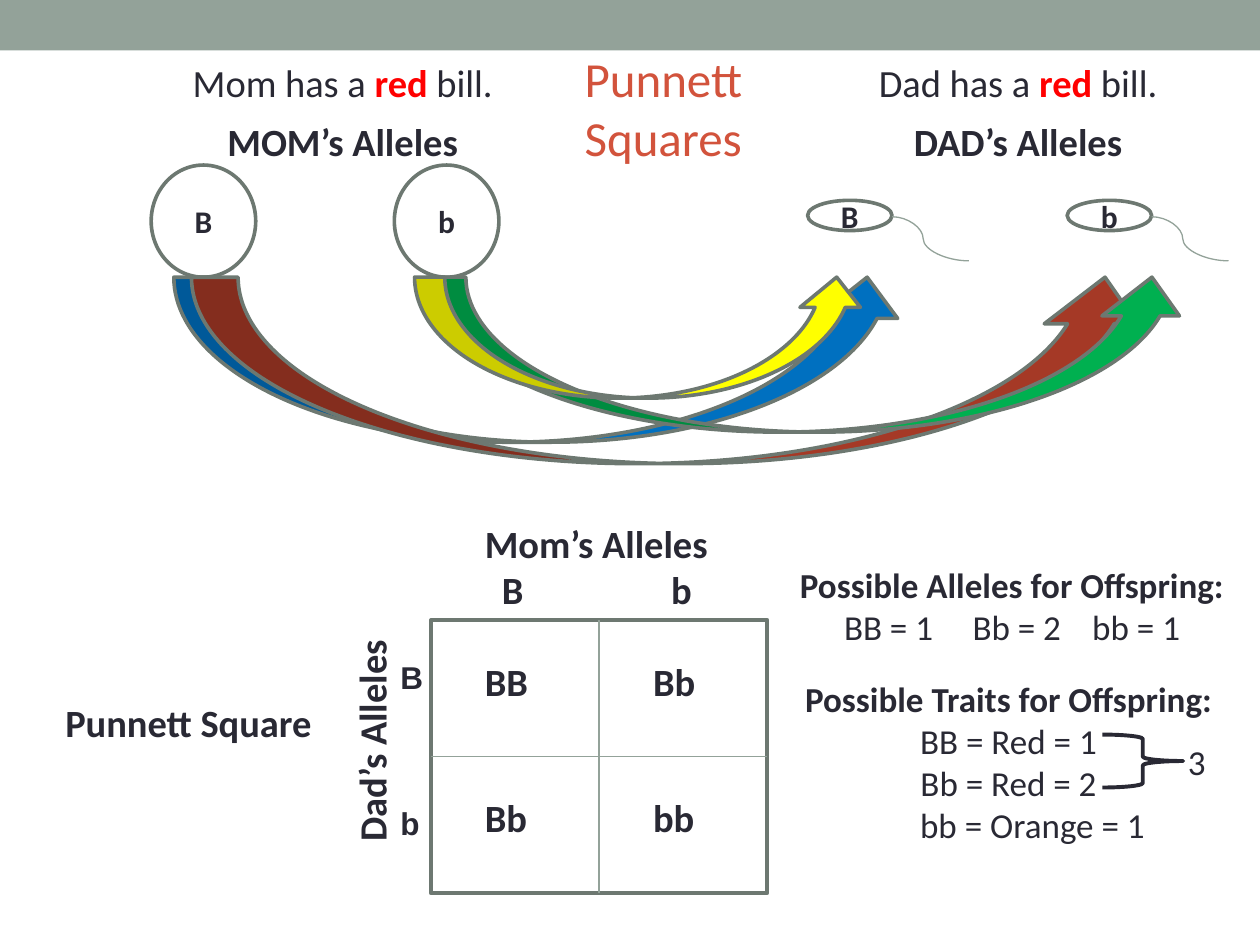
from lxml.etree import SubElement
from pptx import Presentation
from pptx.dml.color import RGBColor
from pptx.enum.shapes import MSO_CONNECTOR, MSO_SHAPE
from pptx.enum.text import MSO_ANCHOR, MSO_AUTO_SIZE, PP_ALIGN
from pptx.oxml.ns import qn
from pptx.util import Inches, Pt

INK, RED, RUST = "292934", "FF0000", "D2533C"
SAGE, EDGE = "93A299", "6D7871"


def paint(color, hue):
    color.rgb = RGBColor.from_string(hue)


def write(para, text, size=22, bold=False, hue=INK, font="Calibri"):
    run = para.add_run()
    run.text = text
    run.font.name = font
    run.font.size = Pt(size)
    run.font.bold = bold
    paint(run.font.color, hue)


def set_tabs(para, stops):
    tabs = SubElement(para._p.get_or_add_pPr(), qn("a:tabLst"))
    for pos, align in stops:
        SubElement(tabs, qn("a:tab"), pos=str(Inches(pos)), algn=align)


def add_text(slide, x, y, w, h):
    box = slide.shapes.add_textbox(Inches(x), Inches(y), Inches(w), Inches(h))
    box.text_frame.word_wrap = True
    return box


def label(slide, text, x, y, w, h=0.47, **style):
    box = add_text(slide, x, y, w, h)
    write(box.text_frame.paragraphs[0], text, **style)
    return box


def add_shape(shapes, kind, x, y, w, h, fill=None, line=EDGE, width=2.08):
    shape = shapes.add_shape(kind, Inches(x), Inches(y), Inches(w), Inches(h))
    shape.shadow.inherit = False
    if fill:
        shape.fill.solid()
        paint(shape.fill.fore_color, fill)
    else:
        shape.fill.background()
    if line:
        paint(shape.line.color, line)
        shape.line.width = Pt(width)
    else:
        shape.line.fill.background()
    return shape


def add_line(shapes, kind, x1, y1, x2, y2):
    line = shapes.add_connector(kind, Inches(x1), Inches(y1), Inches(x2), Inches(y2))
    paint(line.line.color, SAGE)
    line.line.width = Pt(0.75)
    SubElement(line._element.spPr, qn("a:effectLst"))
    return line


def add_header(slide, x, y, w, h):
    title = slide.shapes.title
    title.left, title.top = Inches(x), Inches(y)
    title.width, title.height = Inches(w), Inches(h)
    frame = title.text_frame
    frame.auto_size = MSO_AUTO_SIZE.NONE
    frame.vertical_anchor = MSO_ANCHOR.MIDDLE
    top, low = frame.paragraphs[0], frame.add_paragraph()
    for para in (top, low):
        para.alignment = PP_ALIGN.LEFT
        set_tabs(para, [(2.29, "ctr"), (4.21, "l"), (7.65, "ctr")])
    write(top, "\tMom has a ")
    write(top, "red", bold=True, hue=RED)
    write(top, " bill.")
    write(top, "\tPunnett", size=28, hue=RUST)
    write(top, "\tDad has a ")
    write(top, "red", bold=True, hue=RED)
    write(top, " bill.")
    write(low, "\tMOM’s Alleles", bold=True)
    write(low, "\tSquares", size=28, hue=RUST)
    write(low, "\tDAD’s Alleles", bold=True)


def add_cell(slide, letter, x, y, w, h):
    cell = add_shape(slide.shapes, MSO_SHAPE.OVAL, x, y, w, h)
    frame = cell.text_frame
    frame.margin_left = frame.margin_right = 0
    frame.margin_top = frame.margin_bottom = 0
    frame.word_wrap = False
    frame.vertical_anchor = MSO_ANCHOR.MIDDLE
    frame.paragraphs[0].alignment = PP_ALIGN.CENTER
    write(frame.paragraphs[0], letter, size=18, bold=True)


def add_eggs(slide, x, y):
    for letter, dx in (("B", 0), ("b", 1.93)):
        add_cell(slide, letter, x + dx, y, 0.83, 0.89)


def add_sperm(slide, x, y):
    for letter, dx in (("B", 0), ("b", 2.06)):
        add_cell(slide, letter, x + dx, y, 0.67, 0.24)
        start = x + dx + 0.67
        tail = add_line(slide.shapes, MSO_CONNECTOR.CURVE,
                        start, y + 0.13, start + 0.61, y + 0.48)
        bend = tail._element.spPr.find(".//" + qn("a:avLst"))
        SubElement(bend, qn("a:gd"), name="adj1", fmla="val 40500")


def add_arrows(slide, y):
    for x, w, h, hue in ((1.38, 5.83, 1.31, "0070C0"), (1.52, 7.62, 1.48, "A53926"),
                         (3.39, 6.06, 1.23, "00B050"), (3.29, 3.59, 0.96, "FFFF00")):
        add_shape(slide.shapes, MSO_SHAPE.CURVED_UP_ARROW, x, y, w, h, fill=hue)


def add_square(slide, x, y, w, h):
    group = slide.shapes.add_group_shape().shapes
    frame = add_shape(group, MSO_SHAPE.RECTANGLE, x, y, w, h)
    midx, midy = x + w / 2, y + h / 2
    for ends, sides in (((midx, y, midx, y + h), (0, 2)),
                        ((x, midy, x + w, midy), (1, 3))):
        line = add_line(group, MSO_CONNECTOR.STRAIGHT, *ends)
        line.begin_connect(frame, sides[0])
        line.end_connect(frame, sides[1])

    mom = label(slide, "Mom’s Alleles", x + 0.33, y - 0.84, 2.33, 0.84, bold=True)
    para = mom.text_frame.add_paragraph()
    set_tabs(para, [(0.22, "ctr"), (1.56, "ctr")])
    write(para, "\tB\tb", bold=True)
    dad = label(slide, "Dad’s Alleles", x - 1.44, y + 0.65, 1.94, bold=True)
    dad.rotation = 270
    for letter, dy in (("B", 0.25), ("b", 1.41)):
        label(slide, letter, x - 0.34, y + dy, 0.46, 0.4,
              size=18, bold=True, font="Arial")
    for row, pairs in enumerate((("BB", "Bb"), ("Bb", "bb"))):
        for col, pair in enumerate(pairs):
            label(slide, pair, x + 0.33 + col * w / 2, y + 0.25 + row * h / 2,
                  0.78, bold=True)
    label(slide, "Punnett Square", x - 3, y + 0.58, 2.17, bold=True)


def add_results(slide, x, y):
    box = label(slide, "Possible Alleles for Offspring:", x, y, 3.75, 0.77,
                size=20, bold=True)
    para = box.text_frame.add_paragraph()
    set_tabs(para, [(0.35, "l"), (1.37, "l"), (2.32, "l")])
    write(para, "\tBB = 1\tBb = 2\tbb = 1", size=20)

    box = label(slide, "Possible Traits for Offspring:", x - 0.08, y + 0.91, 3.67, 1.75,
                size=20, bold=True)
    frame = box.text_frame
    for text in ("BB = Red = 1", "Bb = Red = 2", "bb = Orange = 1"):
        write(frame.add_paragraph(), text, size=20)
    for para in frame.paragraphs:
        para.alignment = PP_ALIGN.CENTER
    frame.paragraphs[-1]._p.get_or_add_pPr().set("marL", str(Inches(0.38)))
    add_shape(slide.shapes, MSO_SHAPE.RIGHT_BRACE, x + 2.5, y + 1.41, 0.64, 0.42,
              line=INK, width=2.25)
    label(slide, "3", x + 3.08, y + 1.41, 0.33, 0.44, size=20)


def main():
    deck = Presentation()
    deck.slide_width, deck.slide_height = Inches(10), Inches(7.5)
    slide = deck.slides.add_slide(deck.slide_layouts[5])
    add_shape(slide.shapes, MSO_SHAPE.RECTANGLE, 0, 0, 10, 0.4, fill=SAGE, line=None)
    add_header(slide, 0.33, 0.33, 9.25, 1.04)
    add_eggs(slide, 1.2, 1.31)
    add_sperm(slide, 6.41, 1.59)
    add_arrows(slide, 2.2)
    add_square(slide, 3.42, 4.92, 2.67, 2.17)
    add_results(slide, 6.25, 4.42)
    deck.save("out.pptx")


if __name__ == "__main__":
    main()
